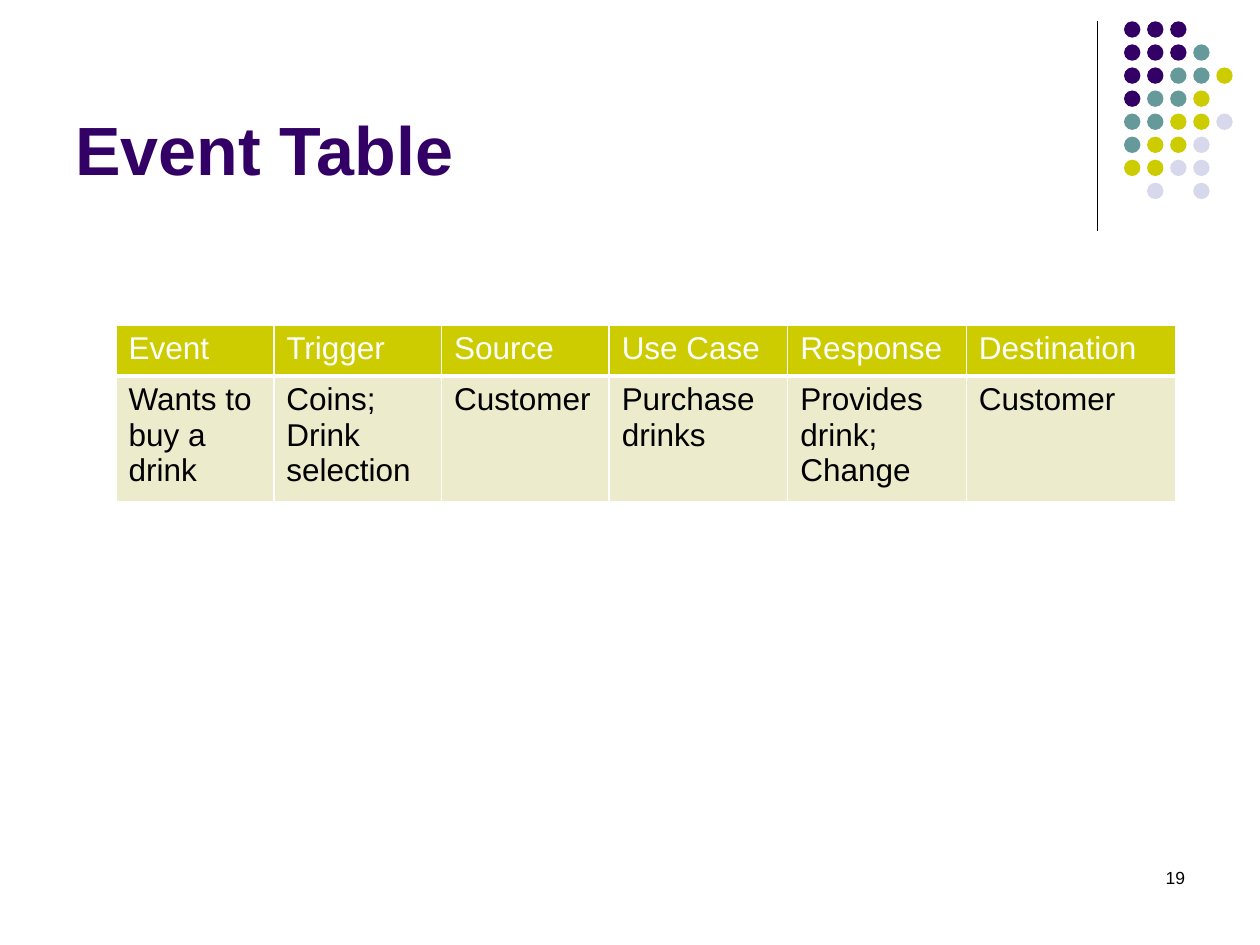
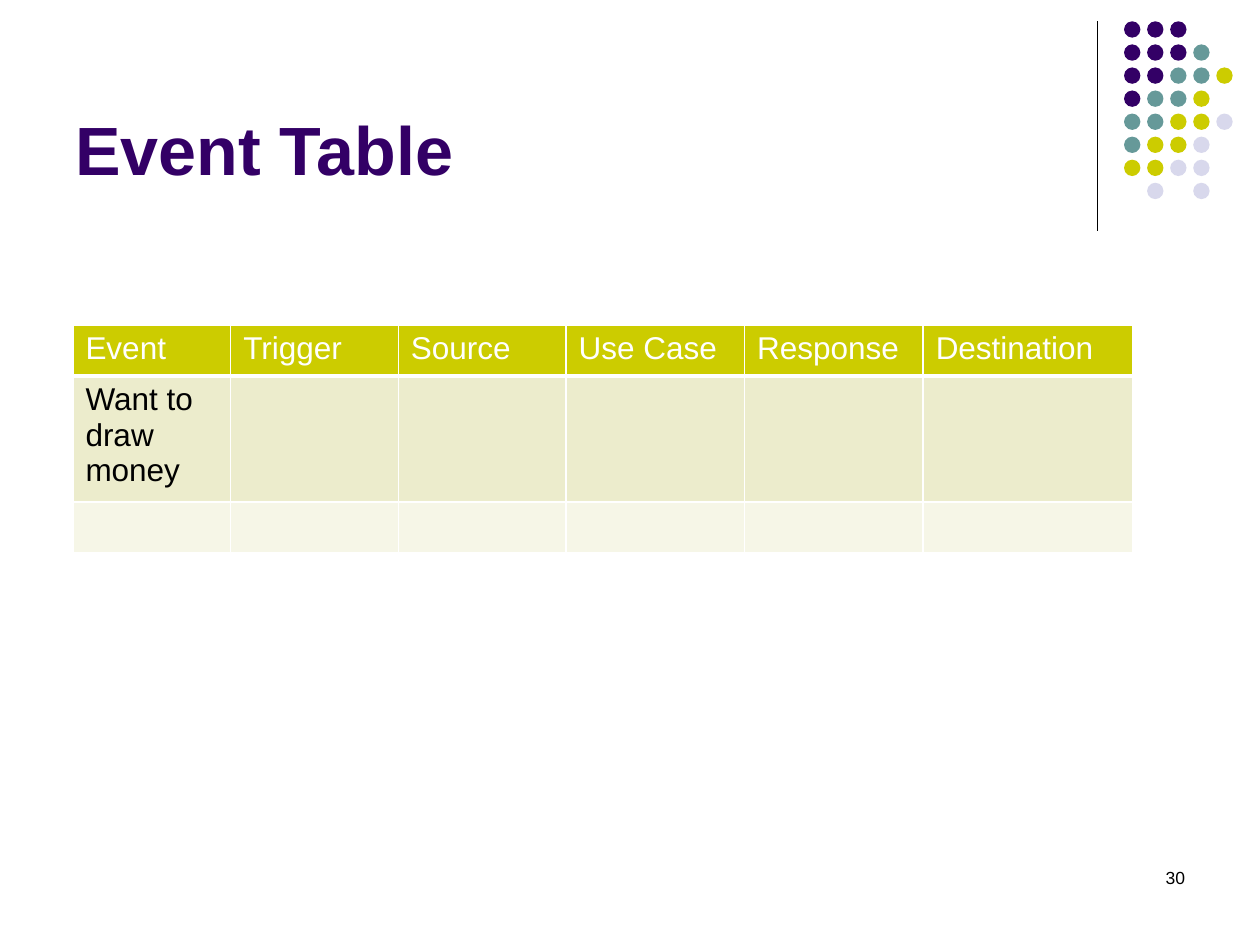
from dataclasses import dataclass

from lxml import etree
from pptx import Presentation
from pptx import util as u
from pptx.dml.color import RGBColor
from pptx.enum import shapes, text
from pptx.oxml.ns import qn


@dataclass(frozen=True)
class Theme:
    font: str = "Arial"
    purple: str = "330066"
    teal: str = "669999"
    lime: str = "CCCC00"
    lilac: str = "D8D8EC"
    band_dark: str = "ECECCC"
    band_light: str = "F6F6E7"
    black: str = "000000"
    white: str = "FFFFFF"
    title_size: int = 39
    table_size: int = 18
    number_size: int = 10


# One string per row of dots, one letter per dot
DOT_ROWS = ["ppp", "pppt", "ppttl", "pttl", "ttlls", "tlls", "llss", " s s"]
DOT_LEFT, DOT_TOP, DOT_PITCH, DOT_SIZE = 22.66, 0.43, 0.465, 0.33

HEADINGS = ["Event", "Trigger", "Source", "Use Case", "Response", "Destination"]
COLUMN_WIDTHS = [3.18, 3.38, 3.38, 3.6, 3.6, 4.22]
TABLE_TOP, ROW_HEIGHT = 6.55, 1.03


def put_text(tf, content, *, size, color, font, bold=False, align=None):
    """Fill a text frame, one paragraph per line of content."""
    for i, line in enumerate(content.split("\n")):
        p = tf.paragraphs[0] if i == 0 else tf.add_paragraph()
        p.alignment = align
        r = p.add_run()
        r.text = line
        r.font.name, r.font.size, r.font.bold = font, u.Pt(size), bold
        r.font.color.rgb = RGBColor.from_string(color)


def set_borders(cell, color, bottom):
    """Draw 1 pt cell edges, with a bottom edge of its own width."""
    tc_pr = cell._tc.get_or_add_tcPr()
    for side, width in (("L", 1), ("R", 1), ("T", 1), ("B", bottom)):
        ln = etree.SubElement(tc_pr, qn(f"a:ln{side}"), w=str(u.Pt(width)))
        fill = etree.SubElement(ln, qn("a:solidFill"))
        etree.SubElement(fill, qn("a:srgbClr"), val=color)


class Deck:
    def __init__(self, theme):
        self.theme = theme
        self.prs = Presentation()
        self.prs.slide_width, self.prs.slide_height = u.Cm(25.4), u.Cm(19.05)
        self.s = None

    def new_slide(self, title, number):
        t = self.theme
        self.s = self.prs.slides.add_slide(self.prs.slide_layouts[6])
        self.rule(22.12, 0.43, 4.65)
        self.dots()
        self.text_box(title, 1.27, 0.33, 20.96, 3.61, anchor=text.MSO_ANCHOR.BOTTOM,
                      size=t.title_size, color=t.purple, bold=True)
        self.text_box(str(number), 20.96, 17.35, 3.18, 1.27, size=t.number_size,
                      color=t.black, align=text.PP_ALIGN.RIGHT)

    def rule(self, x, top, bottom):
        line = self.s.shapes.add_connector(
            shapes.MSO_CONNECTOR.STRAIGHT, u.Cm(x), u.Cm(top), u.Cm(x), u.Cm(bottom))
        line.line.width = u.Pt(0.75)
        line.line.color.rgb = RGBColor.from_string(self.theme.black)
        etree.SubElement(line._element.spPr, qn("a:effectLst"))

    def dots(self):
        t = self.theme
        colors = {"p": t.purple, "t": t.teal, "l": t.lime, "s": t.lilac}
        group = self.s.shapes.add_group_shape()
        for row, letters in enumerate(DOT_ROWS):
            for col, letter in enumerate(letters):
                if letter not in colors:
                    continue
                sp = group.shapes.add_shape(
                    shapes.MSO_SHAPE.OVAL,
                    u.Cm(DOT_LEFT + col * DOT_PITCH), u.Cm(DOT_TOP + row * DOT_PITCH),
                    u.Cm(DOT_SIZE), u.Cm(DOT_SIZE))
                sp.shadow.inherit = False
                sp.fill.solid()
                sp.fill.fore_color.rgb = RGBColor.from_string(colors[letter])
                sp.line.fill.background()

    def text_box(self, content, left, top, width, height,
                 anchor=text.MSO_ANCHOR.TOP, **style):
        sp = self.s.shapes.add_textbox(u.Cm(left), u.Cm(top), u.Cm(width), u.Cm(height))
        tf = sp.text_frame
        tf.word_wrap = True
        tf.vertical_anchor = anchor
        put_text(tf, content, font=self.theme.font, **style)

    def event_table(self, left, body):
        t = self.theme
        rows = [HEADINGS, *body]
        frame = self.s.shapes.add_table(
            len(rows), len(HEADINGS), u.Cm(left), u.Cm(TABLE_TOP),
            u.Cm(sum(COLUMN_WIDTHS)), u.Cm(ROW_HEIGHT * len(rows)))
        table = frame.table
        for column, width in zip(table.columns, COLUMN_WIDTHS):
            column.width = u.Cm(width)
        for i, row in enumerate(rows):
            table.rows[i].height = u.Cm(ROW_HEIGHT)
            header = i == 0
            band = t.lime if header else t.band_dark if i % 2 else t.band_light
            for j, content in enumerate(row):
                cell = table.cell(i, j)
                set_borders(cell, t.white, bottom=3 if header else 1)
                cell.fill.solid()
                cell.fill.fore_color.rgb = RGBColor.from_string(band)
                if content:
                    put_text(cell.text_frame, content, size=t.table_size, font=t.font,
                             color=t.white if header else t.black)


def main():
    deck = Deck(Theme())

    # Drink purchase
    deck.new_slide("Event Table", 19)
    deck.event_table(2.34, [["Wants to buy a drink", "Coins;\nDrink selection", "Customer",
                             "Purchase drinks", "Provides drink;\nChange", "Customer"]])

    # Money withdrawal, left open to fill in
    deck.new_slide("Event Table", 30)
    blank = [""] * len(HEADINGS)
    deck.event_table(1.47, [["Want to draw money", *blank[1:]], blank])

    deck.prs.save("out.pptx")


if __name__ == "__main__":
    main()
